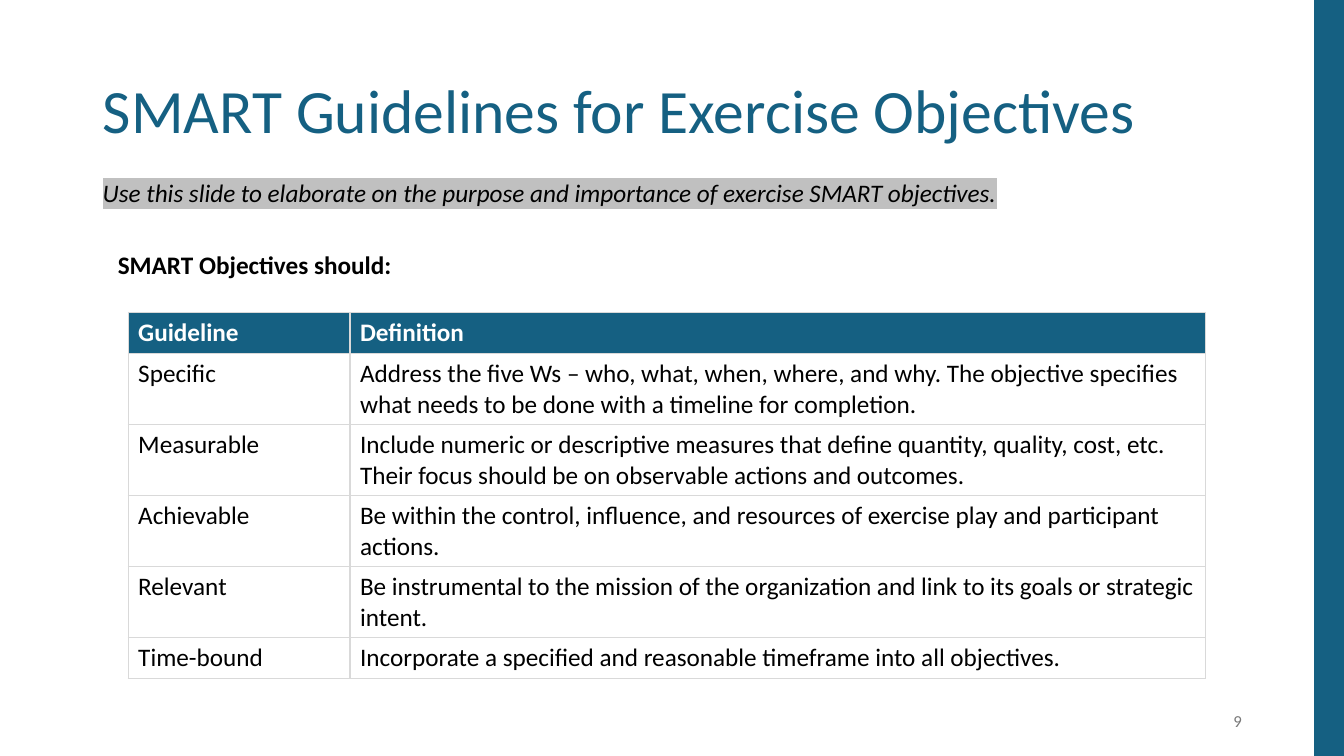
from dataclasses import dataclass

from lxml.etree import SubElement
from pptx import Presentation
from pptx.dml.color import RGBColor as Rgb
from pptx.enum.shapes import MSO_SHAPE as Shape
from pptx.enum.text import MSO_ANCHOR as Anchor, MSO_AUTO_SIZE as AutoSize, PP_ALIGN as Align
from pptx.oxml import parse_xml
from pptx.oxml.ns import nsdecls, qn
from pptx.util import Cm, Pt


@dataclass(frozen=True)
class Theme:
    """Colours, font and type sizes of the slide."""
    font: str = "Calibri"
    accent: str = "156082"
    text: str = "000000"
    inverse: str = "FFFFFF"
    muted: str = "797979"
    border: str = "D9D9D9"
    highlight: str = "C0C0C0"
    title_size: int = 44
    body_size: int = 18
    number_size: int = 12


THEME = Theme()
COLUMN_WIDTHS = (5.59, 21.56)
ONE_LINE, TWO_LINES = 1.03, 1.79
HEADER = ("Guideline", "Definition")
GUIDELINES = (
    ("Specific", "Address the five Ws – who, what, when, where, and why. The objective "
     "specifies what needs to be done with a timeline for completion.", TWO_LINES),
    ("Measurable", "Include numeric or descriptive measures that define quantity, quality, "
     "cost, etc. Their focus should be on observable actions and outcomes.", TWO_LINES),
    ("Achievable", "Be within the control, influence, and resources of exercise play and "
     "participant actions.", TWO_LINES),
    ("Relevant", "Be instrumental to the mission of the organization and link to its goals "
     "or strategic intent.", TWO_LINES),
    ("Time-bound", "Incorporate a specified and reasonable timeframe into all objectives.",
     ONE_LINE),
)


def add_run(paragraph, words, size=THEME.body_size, color=THEME.text, bold=False, italic=False):
    """Append one formatted run and return it."""
    run = paragraph.add_run()
    run.text = words
    font = run.font
    font.name, font.size, font.bold, font.italic = THEME.font, Pt(size), bold, italic
    font.color.rgb = Rgb.from_string(color)
    return run


def highlight(run, color):
    """Put a highlight colour behind a run."""
    mark = parse_xml(f'<a:highlight {nsdecls("a")}><a:srgbClr val="{color}"/></a:highlight>')
    run.font._element.find(qn("a:solidFill")).addnext(mark)


def add_side_bar(slide):
    """Draw the coloured bar along the right edge."""
    bar = slide.shapes.add_shape(Shape.RECTANGLE, Cm(33.12), 0, Cm(0.75), Cm(19.05))
    bar.shadow.inherit = False
    bar.fill.solid()
    bar.fill.fore_color.rgb = Rgb.from_string(THEME.accent)
    bar.line.fill.background()


def set_title(slide, words):
    """Place and format the title placeholder."""
    title = slide.shapes.title
    title.left, title.top, title.width, title.height = Cm(2.34), Cm(1.02), Cm(29.21), Cm(3.68)
    frame = title.text_frame
    frame.auto_size, frame.vertical_anchor = AutoSize.NONE, Anchor.MIDDLE
    paragraph = frame.paragraphs[0]
    paragraph.alignment, paragraph.line_spacing = Align.LEFT, 0.9
    add_run(paragraph, words, THEME.title_size, THEME.accent)


def add_line_of_text(slide, left, top, width, words, align=Align.LEFT, anchor=Anchor.TOP, **style):
    """Add a one-line text box and return its run."""
    frame = slide.shapes.add_textbox(Cm(left), Cm(top), Cm(width), Cm(1.02)).text_frame
    frame.word_wrap, frame.vertical_anchor = True, anchor
    frame.paragraphs[0].alignment = align
    return add_run(frame.paragraphs[0], words, **style)


def add_borders(cell):
    """Draw a thin line on all four sides of a cell."""
    properties = cell._tc.get_or_add_tcPr()
    for position, side in enumerate(("lnL", "lnR", "lnT", "lnB")):
        line = SubElement(properties, qn(f"a:{side}"), w=str(Pt(1)))
        fill = SubElement(line, qn("a:solidFill"))
        SubElement(fill, qn("a:srgbClr"), val=THEME.border)
        properties.insert(position, line)


def fill_cell(cell, words, is_header):
    """Write and format one table cell."""
    if is_header:
        cell.fill.solid()
        cell.fill.fore_color.rgb = Rgb.from_string(THEME.accent)
    else:
        cell.fill.background()
    color = THEME.inverse if is_header else THEME.text
    add_run(cell.text_frame.paragraphs[0], words, color=color, bold=is_header)
    add_borders(cell)


def add_guideline_table(slide):
    """Build the table of guidelines and definitions."""
    rows = ((*HEADER, ONE_LINE), *GUIDELINES)
    height = sum(row[-1] for row in rows)
    table = slide.shapes.add_table(len(rows), len(HEADER), Cm(3.23), Cm(7.87),
                                   Cm(sum(COLUMN_WIDTHS)), Cm(height)).table
    table.horz_banding = False
    for column, width in zip(table.columns, COLUMN_WIDTHS):
        column.width = Cm(width)
    for index, (*entries, row_height) in enumerate(rows):
        table.rows[index].height = Cm(row_height)
        for cell, words in zip(table.rows[index].cells, entries):
            fill_cell(cell, words, is_header=index == 0)


def main():
    """Build and save the slide."""
    deck = Presentation()
    deck.slide_width, deck.slide_height = Cm(33.87), Cm(19.05)
    slide = deck.slides.add_slide(deck.slide_layouts.get_by_name("Title Only"))
    add_side_bar(slide)
    set_title(slide, "SMART Guidelines for Exercise Objectives")
    hint = add_line_of_text(
        slide, 2.34, 4.34, 28.3,
        "Use this slide to elaborate on the purpose and importance of exercise SMART objectives.",
        italic=True)
    highlight(hint, THEME.highlight)
    add_line_of_text(slide, 2.72, 6.15, 9.42, "SMART Objectives should:", bold=True)
    add_guideline_table(slide)
    add_line_of_text(slide, 23.93, 17.65, 7.62, "9", Align.RIGHT, Anchor.MIDDLE,
                     size=THEME.number_size, color=THEME.muted)
    deck.save("out.pptx")


if __name__ == "__main__":
    main()
